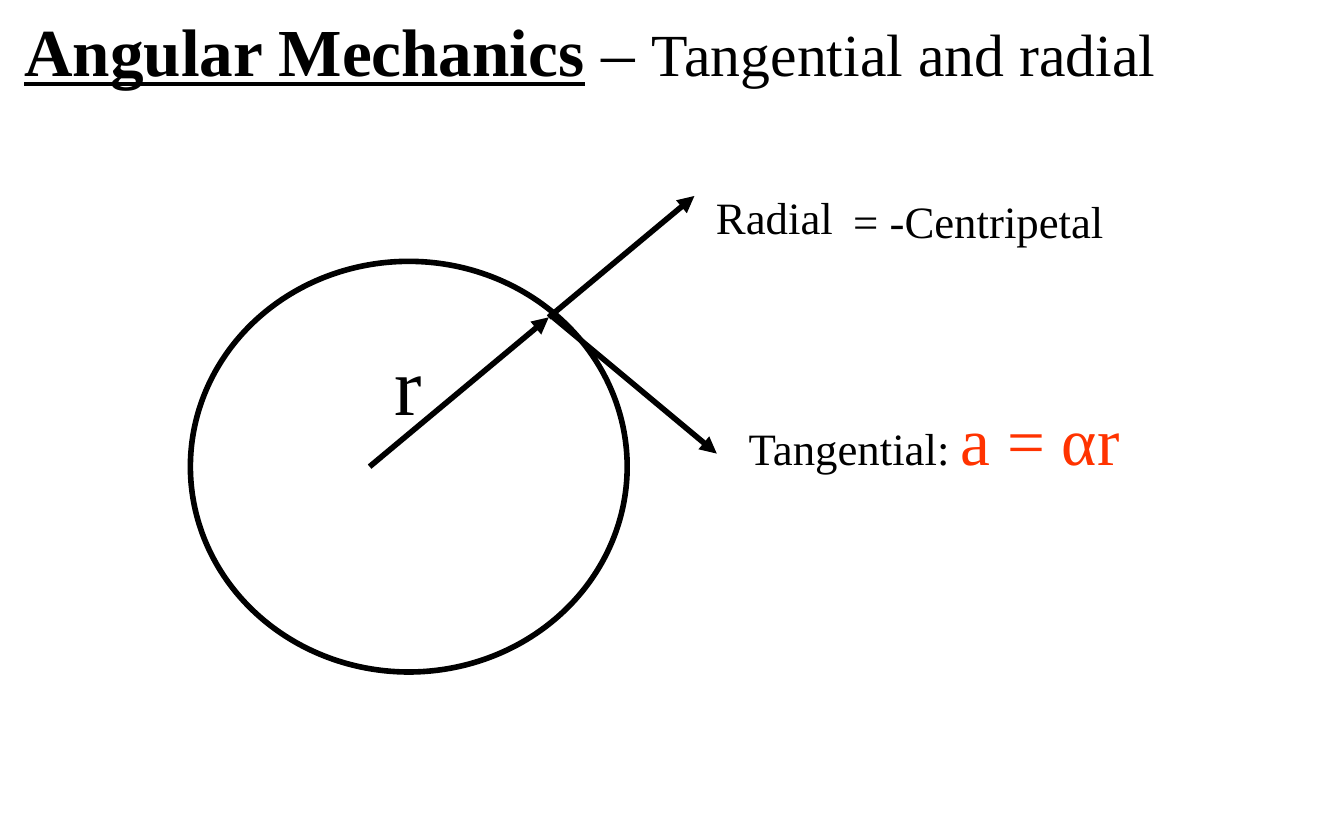
from dataclasses import dataclass

from lxml.etree import SubElement
from pptx import Presentation
from pptx.dml.color import RGBColor
from pptx.enum.shapes import MSO_CONNECTOR as Connector, MSO_SHAPE as Shape
from pptx.enum.text import MSO_ANCHOR as Anchor, MSO_AUTO_SIZE as AutoSize, PP_ALIGN as Align
from pptx.oxml.ns import qn
from pptx.shapes.base import BaseShape
from pptx.slide import Slide
from pptx.util import Pt


@dataclass(frozen=True)
class Theme:
    """Colours, font and sizes used on the page."""
    font: str = "Times New Roman"
    ink: RGBColor = RGBColor(0, 0, 0)
    paper: RGBColor = RGBColor(255, 255, 255)
    accent: RGBColor = RGBColor(0xFF, 0x33, 0)
    small: float = 18
    label: float = 24
    subtitle: float = 32
    title: float = 36
    radius: float = 44
    stroke: float = 3


THEME = Theme()


@dataclass(frozen=True)
class Span:
    """A stretch of text in one format."""
    text: str
    size: float
    color: RGBColor = THEME.ink
    strong: bool = False


@dataclass(frozen=True)
class Label:
    """Text with its frame in points."""
    left: float
    top: float
    width: float
    height: float
    spans: tuple[Span, ...]


@dataclass(frozen=True)
class Arrow:
    """A vector between two points."""
    start: tuple[float, float]
    end: tuple[float, float]


TITLE = Label(5.75, 1.5, 626.5, 51, (
    Span("Angular Mechanics", THEME.title, strong=True),
    Span(" – ", THEME.title),
    Span("Tangential and radial", THEME.subtitle),
))
RIM = (294, 170)
ARROWS = (
    Arrow((198, 250), RIM),
    Arrow(RIM, (372, 105)),
    Arrow((294, 168), (384, 243)),
)
LABELS = (
    Label(376.5, 98, 78, 36, (Span("Radial", THEME.label),)),
    Label(394, 210, 223, 51, (
        Span("Tangential: ", THEME.label),
        Span("a = αr", THEME.title, THEME.accent),
        Span(" ", THEME.small),
    )),
    Label(204, 175, 29.5, 60.5, (Span("r", THEME.radius),)),
    Label(450, 100, 150, 36, (Span("= -Centripetal", THEME.label),)),
)


def apply_format(target: object, values: dict[str, object]) -> None:
    """Set each named attribute on the target."""
    for name, value in values.items():
        setattr(target, name, value)


def write_label(box: BaseShape, label: Label) -> None:
    """Place a box and fill it with the label's spans."""
    apply_format(box, {name: Pt(getattr(label, name))
                       for name in ("left", "top", "width", "height")})
    frame = box.text_frame
    apply_format(frame, {"word_wrap": False, "auto_size": AutoSize.SHAPE_TO_FIT_TEXT,
                         "vertical_anchor": Anchor.TOP})
    para = frame.paragraphs[0]
    apply_format(para, {"alignment": Align.LEFT, "line_spacing": 1.0, "space_before": Pt(0)})
    for span in label.spans:
        run = para.add_run()
        run.text = span.text
        apply_format(run.font, {"name": THEME.font, "size": Pt(span.size),
                                "bold": span.strong, "underline": span.strong})
        run.font.color.rgb = span.color


def set_stroke(shape: BaseShape) -> None:
    """Give a shape the common line."""
    shape.line.width = Pt(THEME.stroke)
    shape.line.color.rgb = THEME.ink


def draw_circle(page: Slide) -> None:
    """Draw the path of rotation."""
    circle = page.shapes.add_shape(Shape.OVAL, Pt(102), Pt(140), Pt(234), Pt(220))
    circle.shadow.inherit = False
    circle.fill.solid()
    circle.fill.fore_color.rgb = THEME.paper
    set_stroke(circle)


def draw_arrow(page: Slide, arrow: Arrow) -> None:
    """Draw a vector with a triangular head at its end."""
    points = [Pt(value) for value in arrow.start + arrow.end]
    line = page.shapes.add_connector(Connector.STRAIGHT, *points)
    set_stroke(line)
    SubElement(line.line._get_or_add_ln(), qn("a:tailEnd"), type="triangle")
    SubElement(line._element.spPr, qn("a:effectLst"))


def draw_label(page: Slide, label: Label) -> None:
    """Add a text box for a label."""
    frame = [Pt(value) for value in (label.left, label.top, label.width, label.height)]
    write_label(page.shapes.add_textbox(*frame), label)


def main() -> None:
    """Build and save the deck."""
    deck = Presentation()
    apply_format(deck, {"slide_width": Pt(720), "slide_height": Pt(450)})
    page = deck.slides.add_slide(deck.slide_layouts[5])
    write_label(page.shapes.title, TITLE)
    draw_circle(page)
    for arrow in ARROWS:
        draw_arrow(page, arrow)
    for label in LABELS:
        draw_label(page, label)
    deck.save("out.pptx")


if __name__ == "__main__":
    main()
